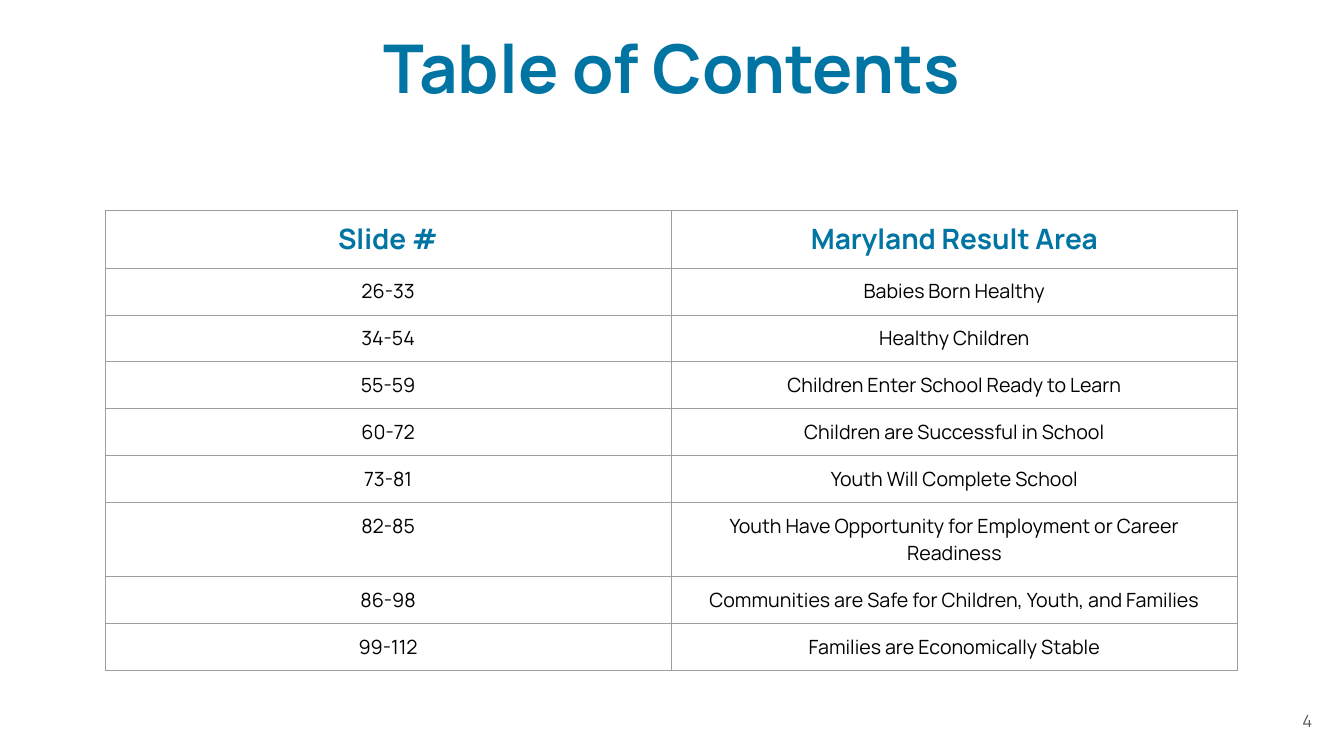
from lxml.etree import SubElement
from pptx import Presentation
from pptx.dml.color import RGBColor
from pptx.enum.text import MSO_ANCHOR, PP_ALIGN
from pptx.oxml.ns import qn
from pptx.util import Pt

PX = 6350  # 144 px to the inch
BLUE, BLACK, GREY, LINE = "0074A2", "000000", "585959", "9E9E9E"


def write(frame, text, size, color, align, bold=False):
    para = frame.paragraphs[0]
    para.alignment = align
    run = para.add_run()
    run.text = text
    run.font.name = "Manrope"
    run.font.size = Pt(size)
    run.font.bold = bold
    run.font.color.rgb = RGBColor.from_string(color)
    return para


def add_box(left, top, width, height):
    frame = slide.shapes.add_textbox(left * PX, top * PX, width * PX, height * PX).text_frame
    frame.word_wrap = True
    frame.vertical_anchor = MSO_ANCHOR.MIDDLE
    return frame


deck = Presentation()
deck.slide_width, deck.slide_height = 1920 * PX, 1080 * PX
slide = deck.slides.add_slide(deck.slide_layouts[6])

# Title and slide number
title = write(add_box(132, 29, 1655, 147), "Table of Contents", 48, BLUE, PP_ALIGN.CENTER, True)
title.line_spacing = 0.9
write(add_box(1457, 1001, 432, 58), "4", 12, GREY, PP_ALIGN.RIGHT)

# Contents table: row height, slides, result area
rows = [
    (83, "Slide #", "Maryland Result Area"),
    (67, "26-33", "Babies Born Healthy"),
    (67, "34-54", "Healthy Children"),
    (67, "55-59", "Children Enter School Ready to Learn"),
    (67, "60-72", "Children are Successful in School"),
    (67, "73-81", "Youth Will Complete School"),
    (106, "82-85", "Youth Have Opportunity for Employment or Career Readiness"),
    (67, "86-98", "Communities are Safe for Children, Youth, and Families"),
    (67, "99-112", "Families are Economically Stable"),
]
total = sum(row[0] for row in rows)
table = slide.shapes.add_table(
    len(rows), 2, 150 * PX, 300 * PX, 1618 * PX, total * PX).table
table.first_row = table.horz_banding = False

for r, (height, *texts) in enumerate(rows):
    head = r == 0
    table.rows[r].height = height * PX
    for c, text in enumerate(texts):
        cell = table.cell(r, c)
        cell.margin_left = cell.margin_right = 14 * PX
        cell.margin_top = cell.margin_bottom = 14 * PX
        write(cell.text_frame, text, 20 if head else 14,
              BLUE if head else BLACK, PP_ALIGN.CENTER, head)
        # Borders come before the fill in the cell properties
        props = cell._tc.get_or_add_tcPr()
        for side in ("L", "R", "T", "B"):
            edge = SubElement(props, qn(f"a:ln{side}"), w=str(Pt(0.75)))
            fill = SubElement(edge, qn("a:solidFill"))
            SubElement(fill, qn("a:srgbClr"), val=LINE)
        cell.fill.background()

deck.save("out.pptx")
